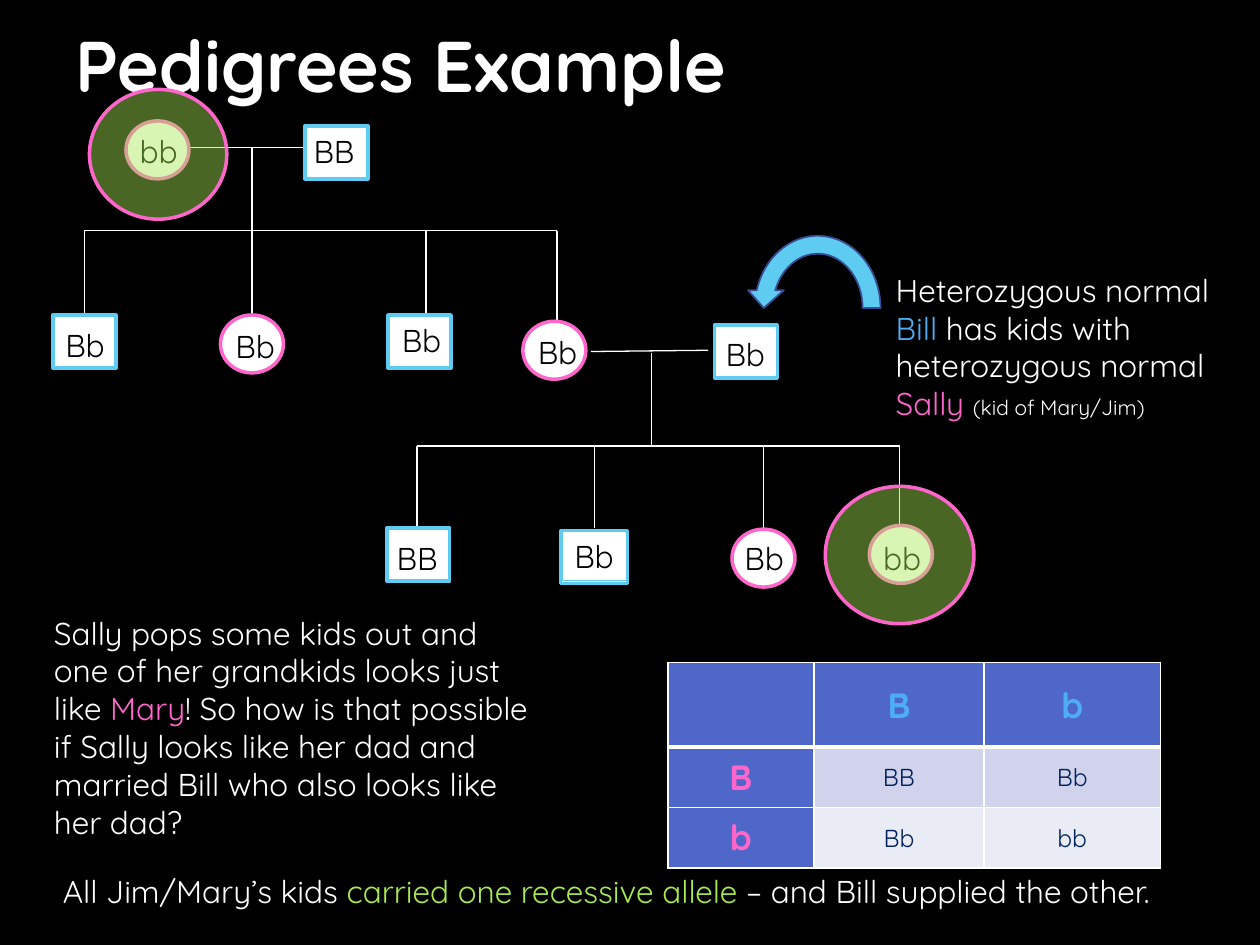
from pptx import Presentation
from pptx.dml.color import RGBColor
from pptx.enum.shapes import MSO_CONNECTOR, MSO_SHAPE
from pptx.enum.text import MSO_ANCHOR, MSO_AUTO_SIZE, PP_ALIGN
from pptx.oxml.ns import qn
from pptx.util import Inches, Pt
from lxml.etree import SubElement

COLS, ROWS = 100, 75
WIDE, HIGH = Inches(10), Inches(7.5)
FONT = "Quicksand"
WHITE, BLACK, PINK, SKY = "FFFFFF", "000000", "FF66CC", "5ECBF1"
BLUE, LIME, NAVY, HEAD = "4FADF3", "A7EA52", "002060", "4E67C8"


def hue(code):
    return RGBColor.from_string(code)


def grid(x, y):
    return round(WIDE * x / COLS), round(HIGH * y / ROWS)


def paint(fill, code):
    fill.solid()
    fill.fore_color.rgb = hue(code)


def style(font, size, code, bold=False):
    font.name, font.size, font.bold = FONT, Pt(size), bold
    font.color.rgb = hue(code)


def shape(slide, kind, x, y, w, h, fill, edge, width=2):
    item = slide.shapes.add_shape(kind, *grid(x, y), *grid(w, h))
    item.shadow.inherit = False
    paint(item.fill, fill)
    item.line.color.rgb = hue(edge)
    item.line.width = Pt(width)
    return item


def line(slide, x, y, right, down):
    item = slide.shapes.add_connector(
        MSO_CONNECTOR.STRAIGHT, *grid(x, y), *grid(right, down))
    item.line.color.rgb = hue(WHITE)
    item.line.width = Pt(0.75)
    SubElement(item._element.spPr, qn("a:effectLst"))


def text(slide, x, y, w, h, parts, size=18, wrap=True, bold=False):
    box = slide.shapes.add_textbox(*grid(x, y), *grid(w, h))
    frame = box.text_frame
    frame.word_wrap = wrap
    frame.auto_size = MSO_AUTO_SIZE.SHAPE_TO_FIT_TEXT
    para = frame.paragraphs[0]
    style(para.font, size, parts[0][1], bold)
    for words, code, *small in parts:
        run = para.add_run()
        run.text = words
        if len(parts) > 1:
            style(run.font, small[0] if small else size, code)
    return box


def person(slide, sex, x, y, gene, left, top, w=5):
    if sex == "m":
        shape(slide, MSO_SHAPE.RECTANGLE, x, y, w, 4.2, WHITE, SKY)
    else:
        shape(slide, MSO_SHAPE.OVAL, x, y, w, 4.6, WHITE, PINK)
    wide = {"BB": 6.4, "Bb": 5.2, "bb": 5.5}[gene]
    return text(slide, left, top, wide, 4, [(gene, BLACK)], wrap=False)


def halo(slide, x, y, w, h):
    ring = shape(slide, MSO_SHAPE.OVAL, x, y, w, h, LIME, PINK)
    tint = ring._element.spPr.find(qn("a:solidFill"))[0]
    SubElement(tint, qn("a:alpha"), val="44000")


def border(cell, row):
    props = cell._tc.get_or_add_tcPr()
    for spot, side in enumerate(("lnL", "lnR", "lnT", "lnB")):
        thick = (row == 0 and side == "lnB") or (row == 1 and side == "lnT")
        edge = props.makeelement(qn(f"a:{side}"), {"w": str(Pt(3 if thick else 1))})
        fill = SubElement(edge, qn("a:solidFill"))
        SubElement(fill, qn("a:srgbClr"), val=WHITE)
        props.insert(spot, edge)


def square(slide):
    data = [["", "B", "b"], ["B", "BB", "Bb"], ["b", "Bb", "bb"]]
    wide, high = [11.6, 13.5, 14], [6.7, 4.8, 4.8]
    table = slide.shapes.add_table(
        3, 3, *grid(53, 52.6), *grid(sum(wide), sum(high))).table
    for i in range(3):
        table.columns[i].width = grid(wide[i], 0)[0]
        table.rows[i].height = grid(0, high[i])[1]
    for r, genes in enumerate(data):
        for c, gene in enumerate(genes):
            cell = table.cell(r, c)
            head = r == 0 or c == 0
            paint(cell.fill, HEAD if head else ("D0D3EB", "E9EBF5")[r - 1])
            border(cell, r)
            cell.vertical_anchor = MSO_ANCHOR.MIDDLE
            cell.margin_left = cell.margin_right = Inches(0.07)
            cell.margin_top = cell.margin_bottom = 0
            para = cell.text_frame.paragraphs[0]
            para.alignment = PP_ALIGN.CENTER
            if gene:
                para.add_run().text = gene
            code = BLUE if r == 0 else PINK if c == 0 else NAVY
            style(para.font, 20 if head else 14, code, head)


def brood(slide, stem, top, bar, kids, foot):
    line(slide, stem, top, stem, bar)
    line(slide, kids[0], bar, kids[-1], bar)
    for kid in kids:
        line(slide, kid, bar, kid, foot)


def main():
    deck = Presentation()
    deck.slide_width, deck.slide_height = WIDE, HIGH
    slide = deck.slides.add_slide(deck.slide_layouts[6])
    paint(slide.background.fill, BLACK)

    title = text(slide, 5, 0.2, 90, 9.7, [("Pedigrees Example", WHITE)], 41, bold=True)
    title.text_frame.auto_size = MSO_AUTO_SIZE.NONE
    title.text_frame.vertical_anchor = MSO_ANCHOR.MIDDLE

    line(slide, 13.3, 11.7, 28.3, 11.7)
    line(slide, 46.9, 27.9, 56.2, 27.8)
    brood(slide, 20, 11.7, 18.3, [6.7, 20, 33.8, 44.2], 25.4)
    brood(slide, 51.7, 28, 35.4, [33.1, 47.2, 60.6, 71.4], 41.9)

    person(slide, "f", 10, 9.6, "bb", 10.1, 10)
    person(slide, "m", 24.2, 10, "BB", 23.9, 10)
    person(slide, "m", 4.2, 25, "Bb", 4.2, 25.4)
    person(slide, "f", 17.5, 25, "Bb", 17.7, 25.5)
    person(slide, "m", 30.8, 25, "Bb", 30.9, 25)
    person(slide, "f", 41.5, 25.5, "Bb", 41.7, 25.9)
    person(slide, "m", 56.7, 25.8, "Bb", 56.6, 26.1)
    person(slide, "m", 30.7, 41.9, "BB", 30.5, 42.3)
    label = person(slide, "m", 44.5, 42.1, "Bb", 44.6, 42.1, 5.3)
    label.line.color.rgb = hue(SKY)
    label.line.width = Pt(0.75)
    person(slide, "f", 58.1, 42, "Bb", 58.1, 42.3)
    person(slide, "f", 69, 41.7, "bb", 69.1, 42.3)

    square(slide)
    arrow = shape(slide, MSO_SHAPE.CIRCULAR_ARROW, 59.2, 18, 11.4, 12.9, SKY, "3A4C94", 1)
    arrow._element.spPr.find(qn("a:xfrm")).set("flipH", "1")

    text(slide, 70.1, 21, 27.4, 15.1, [
        ("Heterozygous normal ", WHITE), ("Bill", BLUE),
        (" has kids with heterozygous normal ", WHITE),
        ("Sally ", PINK), ("(kid of Mary/Jim)", WHITE, 12)])
    text(slide, 3.3, 48.2, 40, 19.2, [
        ("Sally pops some kids out and one of her grandkids looks just like ", WHITE),
        ("Mary", PINK),
        ("! So how is that possible if Sally looks like her dad and "
         "married Bill who also looks like her dad?", WHITE)])
    halo(slide, 65.5, 38.6, 11.8, 10.9)
    halo(slide, 7.1, 7.1, 10.9, 10.3)
    text(slide, 4, 68.7, 93.1, 7.1, [
        ("All Jim/Mary’s kids ", WHITE), ("carried one recessive allele ", LIME),
        ("– and Bill supplied the other.", WHITE)], wrap=False)
    deck.save("out.pptx")


if __name__ == "__main__":
    main()
